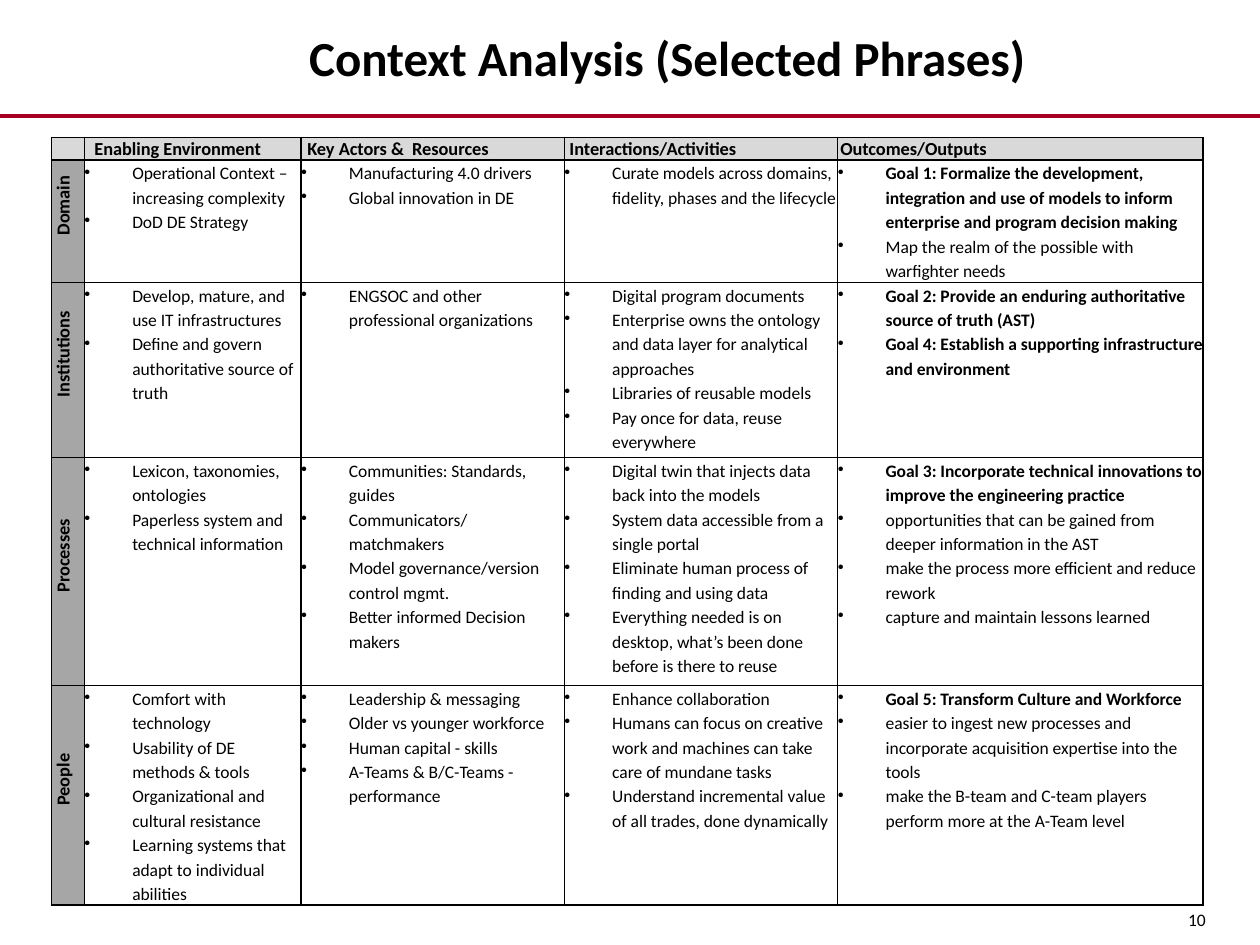
from lxml import etree
from pptx import Presentation
from pptx.dml.color import RGBColor
from pptx.enum.shapes import MSO_CONNECTOR, MSO_SHAPE
from pptx.enum.text import MSO_ANCHOR, PP_ALIGN
from pptx.oxml.ns import qn
from pptx.util import Inches, Pt

STRAIGHT = MSO_CONNECTOR.STRAIGHT
RECT = MSO_SHAPE.RECTANGLE
MIDDLE, TOP = MSO_ANCHOR.MIDDLE, MSO_ANCHOR.TOP
LEFT, CENTER, RIGHT, JUSTIFY = PP_ALIGN.LEFT, PP_ALIGN.CENTER, PP_ALIGN.RIGHT, PP_ALIGN.JUSTIFY


def color(value):
    return RGBColor.from_string(value)


def format_text(p, text, size, bold, align):
    p.text = text
    p.alignment = align
    p.font.name = "Calibri"
    p.font.size = Pt(size)
    p.font.bold = bold
    p.font.color.rgb = color("000000")


headers = ["", "Enabling Environment", "Key Actors &  Resources",
           "Interactions/Activities", "Outcomes/Outputs"]
header_indents = [0, 0.08, 0.05, 0.04, 0.02]
header_aligns = [LEFT, JUSTIFY, LEFT, JUSTIFY, JUSTIFY]
levels = [
    ("Domain",
     ["Operational Context – increasing complexity", "DoD DE Strategy"],
     ["Manufacturing 4.0 drivers", "Global innovation in DE"],
     ["Curate models across domains, fidelity, phases and the lifecycle"],
     ["Goal 1: Formalize the development, integration and use of models to inform "
      "enterprise and program decision making",
      "Map the realm of the possible with warfighter needs"]),
    ("Institutions",
     ["Develop, mature, and use IT infrastructures",
      "Define and govern authoritative source of truth"],
     ["ENGSOC and other professional organizations"],
     ["Digital program documents",
      "Enterprise owns the ontology and data layer for analytical approaches",
      "Libraries of reusable models",
      "Pay once for data, reuse everywhere"],
     ["Goal 2: Provide an enduring authoritative source of truth (AST)",
      "Goal 4: Establish a supporting infrastructure and environment"]),
    ("Processes",
     ["Lexicon, taxonomies, ontologies", "Paperless system and technical information"],
     ["Communities: Standards, guides",
      "Communicators/ matchmakers",
      "Model governance/version control mgmt.",
      "Better informed Decision makers"],
     ["Digital twin that injects data back into the models",
      "System data accessible from a single portal",
      "Eliminate human process of finding and using data",
      "Everything needed is on desktop, what’s been done before is there to reuse"],
     ["Goal 3: Incorporate technical innovations to improve the engineering practice",
      "opportunities that can be gained from deeper information in the AST",
      "make the process more efficient and reduce rework",
      "capture and maintain lessons learned"]),
    ("People",
     ["Comfort with technology",
      "Usability of DE methods & tools",
      "Organizational and cultural resistance",
      "Learning systems that adapt to individual abilities"],
     ["Leadership & messaging",
      "Older vs younger workforce",
      "Human capital - skills",
      "A-Teams & B/C-Teams - performance"],
     ["Enhance collaboration",
      "Humans can focus on creative work and machines can take care of mundane tasks",
      "Understand incremental value of all trades, done dynamically"],
     ["Goal 5: Transform Culture and Workforce",
      "easier to ingest new processes and incorporate acquisition expertise into the tools",
      "make the B-team and C-team players perform more at the A-Team level"]),
]
col_widths = [0.26, 1.72, 2.09, 2.17, 2.9]
row_heights = [0.18, 0.97, 1.39, 1.81, 1.74]

prs = Presentation()
prs.slide_width, prs.slide_height = Inches(10), Inches(7.5)
s = prs.slides.add_slide(prs.slide_layouts[5])

rule = s.shapes.add_connector(STRAIGHT, Inches(0), Inches(0.92), Inches(10), Inches(0.92))
rule.line.color.rgb = color("A50021")
rule.line.width = Pt(2.25)
etree.SubElement(rule._element.spPr, qn("a:effectLst"))

footer = s.shapes.add_shape(RECT, Inches(0), Inches(7.23), Inches(10), Inches(0.14))
footer.shadow.inherit = False
footer.fill.solid()
footer.fill.fore_color.rgb = color("FFFFFF")
footer.line.fill.background()
tf = footer.text_frame
tf.margin_top = tf.margin_bottom = 0
tf.margin_right = Inches(0.43)
tf.vertical_anchor = MIDDLE
format_text(tf.paragraphs[0], "10", 10, False, RIGHT)

title = s.shapes.title
title.left, title.top, title.width, title.height = Inches(2), Inches(0), Inches(6.59), Inches(0.9)
title.text_frame.vertical_anchor = MIDDLE
format_text(title.text_frame.paragraphs[0], "Context Analysis (Selected Phrases)", 28, True, CENTER)

table = s.shapes.add_table(len(row_heights), len(col_widths), Inches(0.41), Inches(1.09),
                           Inches(sum(col_widths)), Inches(sum(row_heights))).table
for col, width in zip(table.columns, col_widths):
    col.width = Inches(width)
for row, height in zip(table.rows, row_heights):
    row.height = Inches(height)

for i, row in enumerate([headers] + levels):
    for j, content in enumerate(row):
        cell = table.cell(i, j)
        cell.margin_left = cell.margin_right = cell.margin_top = cell.margin_bottom = 0
        is_list = i > 0 and j > 0
        cell.vertical_anchor = TOP if is_list else MIDDLE
        tcPr = cell._tc.get_or_add_tcPr()
        for side in ("a:lnL", "a:lnR", "a:lnT", "a:lnB"):
            ln = etree.SubElement(tcPr, qn(side), w=str(Pt(1)))
            fill = etree.SubElement(ln, qn("a:solidFill"))
            etree.SubElement(fill, qn("a:srgbClr"), val="000000")
        if is_list:
            cell.fill.background()
        else:
            cell.fill.solid()
            cell.fill.fore_color.rgb = color("D9D9D9" if i == 0 else "A6A6A6")

        tf = cell.text_frame
        if is_list:
            for k, item in enumerate(content):
                p = tf.paragraphs[0] if k == 0 else tf.add_paragraph()
                format_text(p, item, 10, item.startswith("Goal"), LEFT)
                p.line_spacing = 1.15
                pPr = p._p.get_or_add_pPr()
                pPr.set("marL", str(Inches(0.38)))
                pPr.set("indent", str(-Inches(0.38)))
                bullet = etree.Element(qn("a:buChar"), char="•")
                pPr.insert(1, bullet)
        else:
            p = tf.paragraphs[0]
            format_text(p, content, 10.5, True, header_aligns[j] if i == 0 else CENTER)
            p.line_spacing = Pt(13)
            indent = header_indents[j] if i == 0 else 0.25
            p._p.get_or_add_pPr().set("marL", str(Inches(indent)))
            if i > 0:
                tcPr.set("vert", "vert270")

prs.save("out.pptx")
